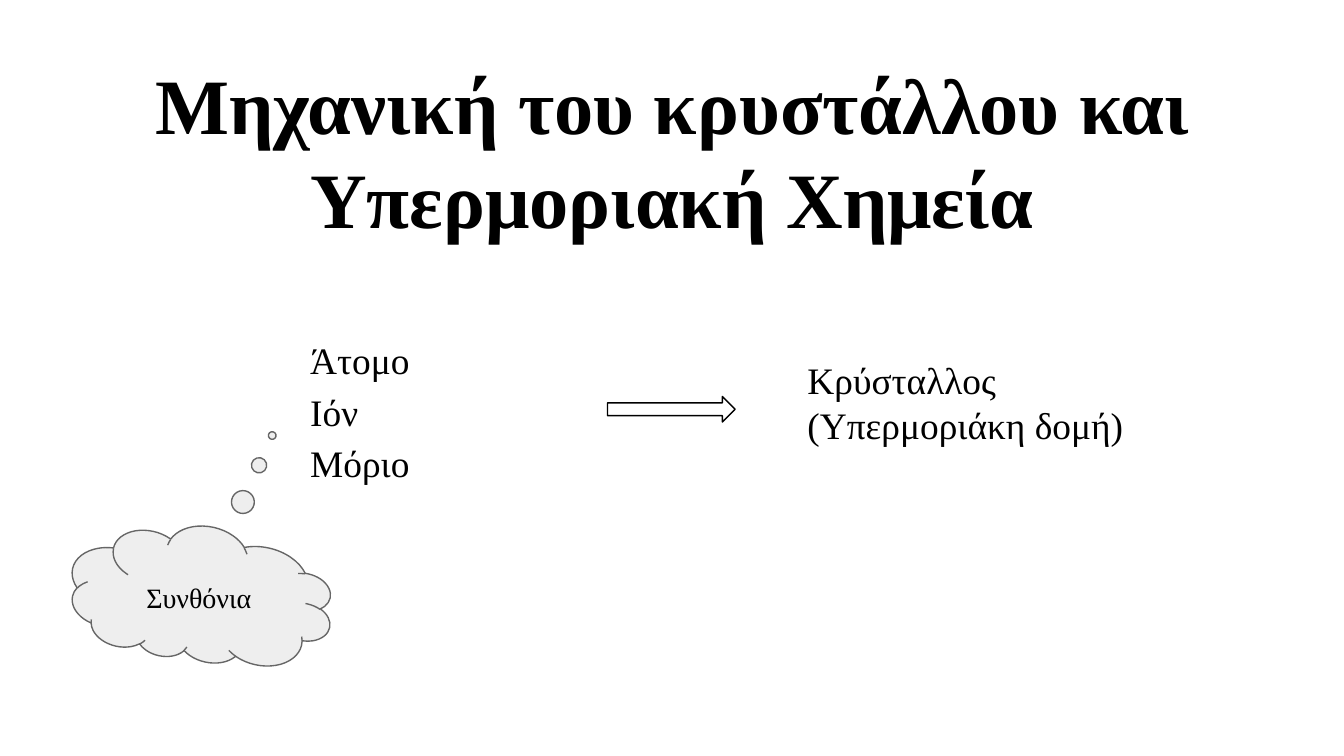
from dataclasses import dataclass

from pptx import Presentation
from pptx.dml.color import RGBColor
from pptx.enum.shapes import MSO_SHAPE
from pptx.enum.text import PP_ALIGN
from pptx.util import Inches, Pt


@dataclass(frozen=True)
class Theme:
    """Colours, font and type sizes of the slide."""
    font: str = "Times New Roman"
    ink: RGBColor = RGBColor(0x00, 0x00, 0x00)
    paper: RGBColor = RGBColor(0xFF, 0xFF, 0xFF)
    cloud: RGBColor = RGBColor(0xEE, 0xEE, 0xEE)
    cloud_edge: RGBColor = RGBColor(0x66, 0x66, 0x66)
    title_size: int = 42
    body_size: int = 20
    thought_size: int = 15
    outline: float = 0.75


THEME = Theme()


def add_text(slide, box, lines, size, bold=False, align=PP_ALIGN.LEFT, spacing=None):
    """Place lines of text in a box with even insets."""
    frame = slide.shapes.add_textbox(*map(Inches, box)).text_frame
    frame.word_wrap = True
    frame.margin_left = frame.margin_right = Inches(0.1)
    frame.margin_top = frame.margin_bottom = Inches(0.1)
    frame.text = "\n".join(lines)
    for paragraph in frame.paragraphs:
        paragraph.alignment = align
        paragraph.line_spacing = spacing
        for run in paragraph.runs:
            run.font.name = THEME.font
            run.font.size = Pt(size)
            run.font.bold = bold
            run.font.color.rgb = THEME.ink


def add_outlined(slide, kind, box, fill, edge, adjustments):
    """Place a flat preset shape with a thin outline."""
    shape = slide.shapes.add_shape(kind, *map(Inches, box))
    shape.shadow.inherit = False
    shape.fill.solid()
    shape.fill.fore_color.rgb = fill
    shape.line.color.rgb = edge
    shape.line.width = Pt(THEME.outline)
    for index, value in enumerate(adjustments):
        shape.adjustments[index] = value
    return shape


def add_title(slide, box):
    """Place the centred slide title."""
    add_text(slide, box, ["Μηχανική του κρυστάλλου και Υπερμοριακή Χημεία"],
             THEME.title_size, bold=True, align=PP_ALIGN.CENTER)


def add_assembly(slide, box):
    """Place the building blocks, the arrow and the crystal they form."""
    left, top, width, height = box
    add_text(slide, (left, top, 1.24, height), ["Άτομο", "Ιόν", "Μόριο"],
             THEME.body_size, spacing=1.15)
    add_outlined(slide, MSO_SHAPE.RIGHT_ARROW, (left + 2.31, top + 0.59, 0.95, 0.19),
                 THEME.paper, THEME.ink, (0.5, 0.5))
    add_text(slide, (left + width - 2.74, top + 0.2, 2.74, 0.97),
             ["Κρύσταλλος", "(Υπερμοριάκη δομή)"], THEME.body_size)


def add_thought(slide, box):
    """Place the thought cloud and its label."""
    left, top, width, height = box
    cloud = add_outlined(slide, MSO_SHAPE.CLOUD_CALLOUT, box,
                         THEME.cloud, THEME.cloud_edge, (-0.13, 1.25))
    cloud.rotation = 192.5
    add_text(slide, (left + 0.47, top + 0.3, 1.09, 0.32), ["Συνθόνια"],
             THEME.thought_size)


def main():
    """Build the slide and save it."""
    deck = Presentation()
    deck.slide_width = Inches(10)
    deck.slide_height = deck.slide_width * 9 // 16
    slide = deck.slides.add_slide(deck.slide_layouts[6])
    add_title(slide, (0.34, 0.32, 9.32, 0.88))
    add_assembly(slide, (2.21, 2.36, 6.44, 1.38))
    add_thought(slide, (0.52, 3.92, 1.96, 1.02))
    deck.save("out.pptx")


if __name__ == "__main__":
    main()
